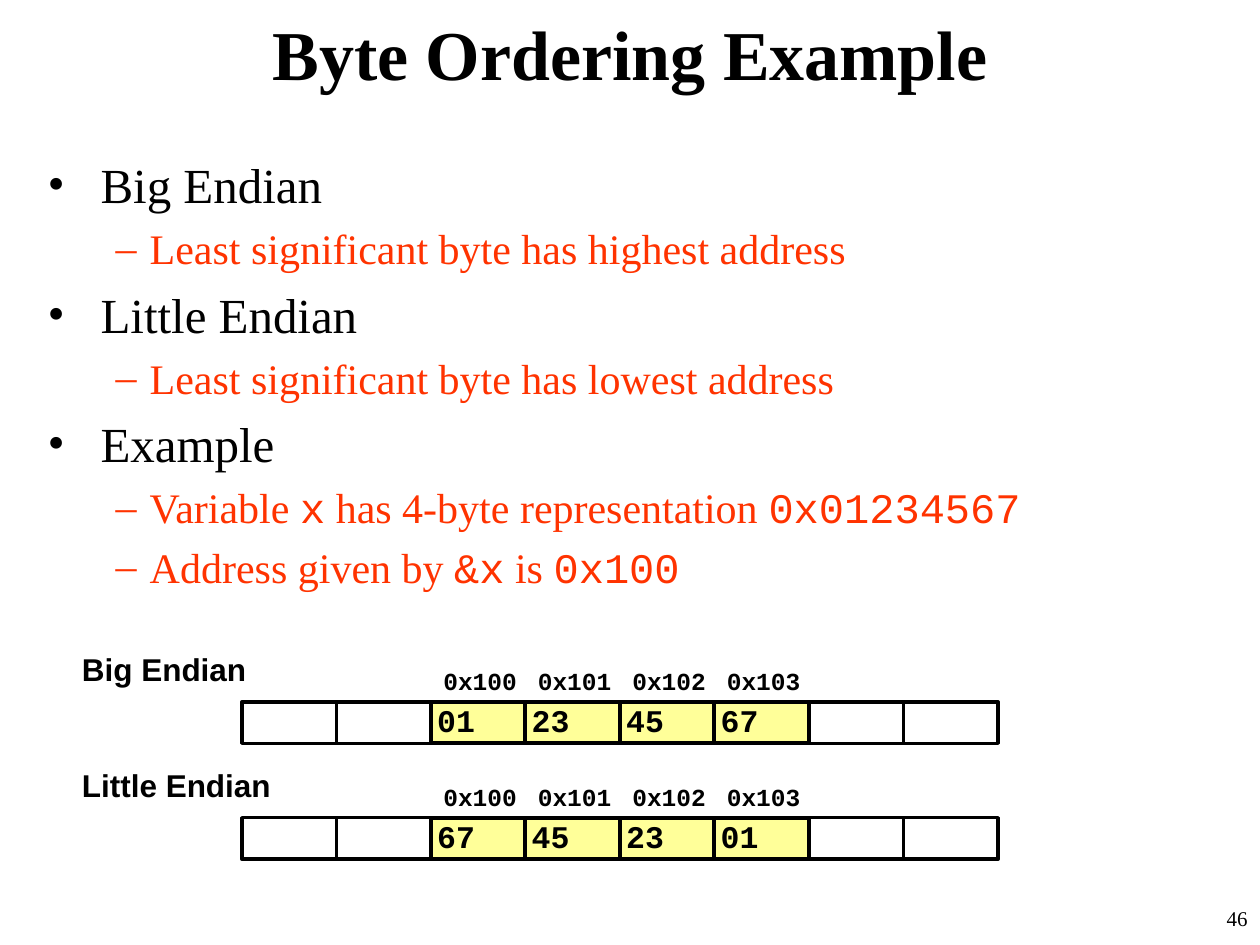
"""Build the byte ordering slide with two memory layouts."""
from pptx import Presentation, util as u
from pptx.dml.color import RGBColor
from pptx.enum import shapes, text
from pptx.oxml.ns import qn
from lxml import etree

THEME = {
    "serif": "Times New Roman", "sans": "Arial", "mono": "Courier New",
    "ink": "000000", "accent": "FF3300", "paper": "FFFFFF", "byte": "FFFF99",
    "title": 40, "head": 28, "sub": 24, "label": 18, "address": 14, "number": 12,
}
TITLE = "Byte Ordering Example"
NUMBER = "46"
BULLETS = [
    (0, [("Big Endian", "serif")]),
    (1, [("Least significant byte has highest address", "serif")]),
    (0, [("Little Endian", "serif")]),
    (1, [("Least significant byte has lowest address", "serif")]),
    (0, [("Example", "serif")]),
    (1, [("Variable ", "serif"), ("x", "mono"),
         (" has 4-byte representation ", "serif"), ("0x01234567", "mono")]),
    (1, [("Address given by ", "serif"), ("&x", "mono"), (" is ", "serif"), ("0x100", "mono")]),
]
LEVELS = [
    {"size": "head", "color": "ink", "char": "•", "left": 0.42, "hang": 0.42},
    {"size": "sub", "color": "accent", "char": "–", "left": 0.81, "hang": 0.27},
]
ADDRESSES = ["0x100", "0x101", "0x102", "0x103"]
MEMORIES = [
    ("Big Endian", 5.57, ["01", "23", "45", "67"]),
    ("Little Endian", 6.49, ["67", "45", "23", "01"]),
]
ROW_LEFT, CELL_W, CELL_H, CELLS, FIRST_BYTE = 1.92, 0.75, 0.33, 8, 2


def rgb(name):
    return RGBColor.from_string(THEME[name])


def box(at):
    return [u.Inches(v) for v in at]


def add_run(p, words, font, size, color="ink", bold=False):
    r = p.add_run()
    r.text = words
    values = {"name": THEME[font], "size": u.Pt(THEME[size]), "bold": bold}
    for key, value in values.items():
        setattr(r.font, key, value)
    r.font.color.rgb = rgb(color)


def set_frame(tf, inset=(0.1, 0.05), wrap=True, anchor=text.MSO_ANCHOR.TOP):
    x, y = map(u.Inches, inset)
    values = {"margin_left": x, "margin_right": x, "margin_top": y, "margin_bottom": y,
              "word_wrap": wrap, "vertical_anchor": anchor, "auto_size": text.MSO_AUTO_SIZE.NONE}
    for key, value in values.items():
        setattr(tf, key, value)
    return tf


def add_text(s, at, words, font, size, bold=False, inset=(0.1, 0.05)):
    tf = set_frame(s.shapes.add_textbox(*box(at)).text_frame, inset)
    add_run(tf.paragraphs[0], words, font, size, bold=bold)
    return tf.paragraphs[0]


def add_cell(s, column, top, fill="paper", line=None, words="", size="label", inset=(0.1, 0.05)):
    at = (ROW_LEFT + column * CELL_W, top, CELL_W, CELL_H)
    sp = s.shapes.add_shape(shapes.MSO_SHAPE.RECTANGLE, *box(at))
    sp.shadow.inherit = False
    sp.fill.solid()
    sp.fill.fore_color.rgb = rgb(fill)
    if line:
        sp.line.color.rgb = rgb("ink")
        sp.line.width = u.Pt(line)
    else:
        sp.line.fill.background()
    p = set_frame(sp.text_frame, inset, False, text.MSO_ANCHOR.MIDDLE).paragraphs[0]
    p.alignment = text.PP_ALIGN.LEFT
    if words:
        add_run(p, words, "mono", size, bold=True)
    return p


def add_title(s):
    sp = s.shapes.title
    sp.left, sp.top, sp.width, sp.height = box((0, 0, 10, 0.84))
    p = set_frame(sp.text_frame, anchor=text.MSO_ANCHOR.MIDDLE).paragraphs[0]
    p.alignment = text.PP_ALIGN.CENTER
    add_run(p, TITLE, "serif", "title", bold=True)


def add_bullets(s):
    tf = set_frame(s.shapes.add_textbox(*box((0.28, 1.18, 9.45, 5.95))).text_frame)
    for i, (level, runs) in enumerate(BULLETS):
        style = LEVELS[level]
        p = tf.add_paragraph() if i else tf.paragraphs[0]
        p.level = level
        p.space_before = u.Pt(round(THEME[style["size"]] * 0.22, 1))
        pPr = p._p.get_or_add_pPr()
        pPr.set("marL", str(u.Inches(style["left"])))
        pPr.set("indent", str(-u.Inches(style["hang"])))
        etree.SubElement(pPr, qn("a:buFont"), typeface=THEME["serif"])
        etree.SubElement(pPr, qn("a:buChar"), char=style["char"])
        for words, font in runs:
            add_run(p, words, font, style["size"], style["color"])


def add_memory(s, label, top, values):
    byte_columns = range(FIRST_BYTE, FIRST_BYTE + len(values))
    for column, address in zip(byte_columns, ADDRESSES):
        add_cell(s, column, top - CELL_H, words=address, size="address")
    for column in set(range(CELLS)) - set(byte_columns):
        add_cell(s, column, top, line=2)
    for column, value in zip(byte_columns, values):
        p = add_cell(s, column, top, "byte", 2.25, value, inset=(0.05, 0.05))
        p.line_spacing = 0.9
    p = add_text(s, (0.58, top - 0.42, 1.95, 0.34), label, "sans", "label", True, (0.07, 0.03))
    p.line_spacing = 0.95


def main():
    prs = Presentation()
    prs.slide_width, prs.slide_height = u.Inches(10), u.Inches(7.5)
    s = prs.slides.add_slide(prs.slide_layouts[5])
    add_title(s)
    add_bullets(s)
    for memory in MEMORIES:
        add_memory(s, *memory)
    p = add_text(s, (7.92, 7.14, 2.08, 0.36), NUMBER, "serif", "number")
    p.alignment = text.PP_ALIGN.RIGHT
    prs.save("out.pptx")


if __name__ == "__main__":
    main()
